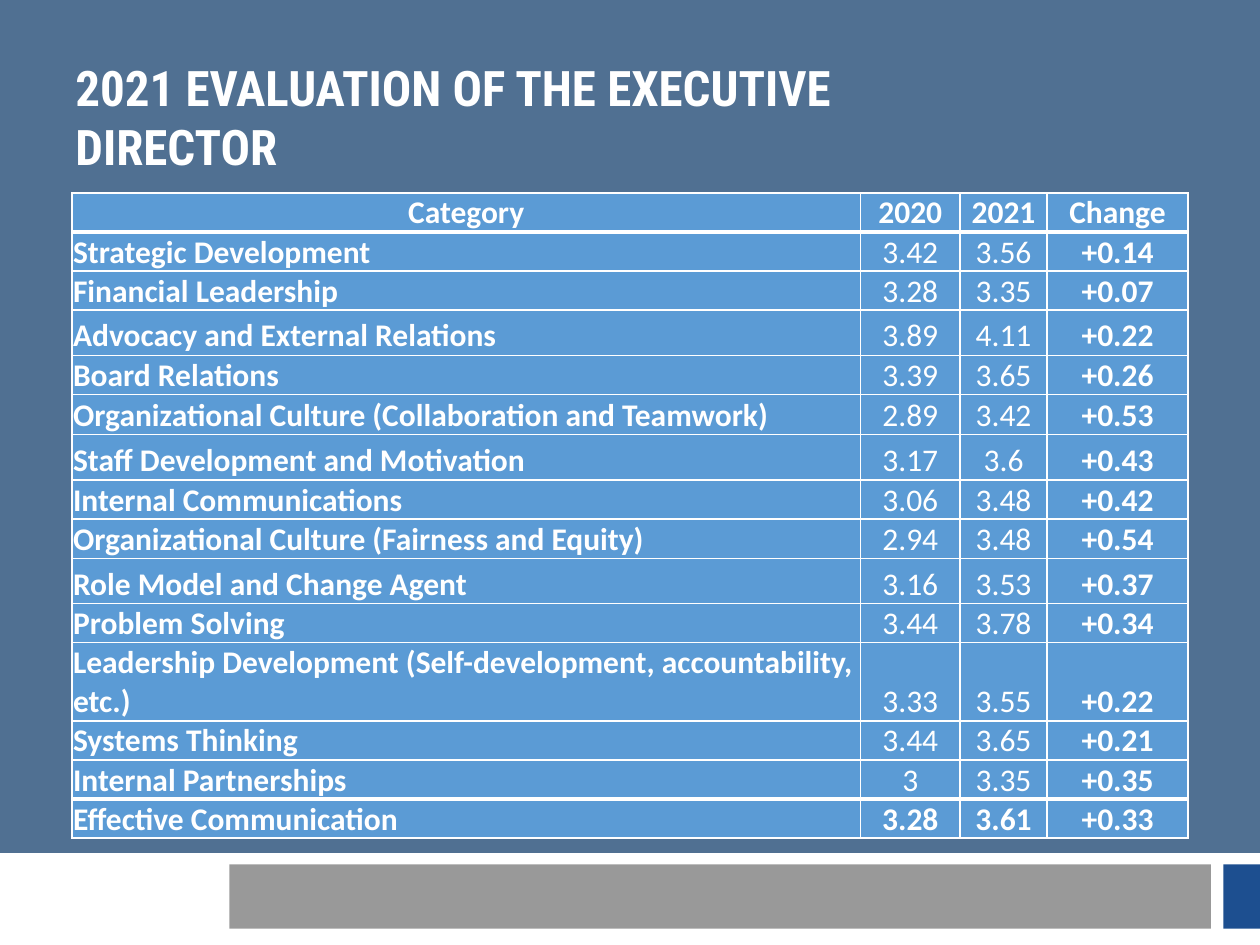
from typing import NamedTuple

from lxml.etree import SubElement
from pptx import Presentation
from pptx.dml.color import RGBColor
from pptx.enum.shapes import MSO_SHAPE
from pptx.enum.text import MSO_ANCHOR, PP_ALIGN
from pptx.oxml.ns import qn
from pptx.util import Inches, Pt

WHITE = RGBColor(0xFF, 0xFF, 0xFF)
BLACK = RGBColor(0x00, 0x00, 0x00)
SLATE = RGBColor(0x50, 0x70, 0x92)
NAVY = RGBColor(0x1D, 0x4F, 0x90)
CELL_BLUE = RGBColor(0x5B, 0x9B, 0xD5)

TITLE = "2021 EVALUATION OF THE EXECUTIVE DIRECTOR"
TITLE_FONT = {"name": "Roboto Condensed", "size": Pt(28), "bold": True}
TABLE_FONT = {"name": "Calibri", "size": Pt(18)}
CELL_FORMAT = {
    "margin_left": Inches(0.01),
    "margin_right": Inches(0.01),
    "margin_top": Inches(0.01),
    "margin_bottom": 0,
    "vertical_anchor": MSO_ANCHOR.BOTTOM,
}
COLUMN_WIDTHS = (6.26, 0.79, 0.69, 1.12)
NORMAL, MEDIUM, TALL, DOUBLE = 0.31, 0.32, 0.36, 0.62
THIN, THICK = Pt(1), Pt(3)


class Panel(NamedTuple):
    left: float
    top: float
    width: float
    height: float
    color: RGBColor
    opacity: int = 100


class Rating(NamedTuple):
    category: str
    before: str
    after: str
    change: str
    height: float = NORMAL


PANELS = (
    Panel(0, 0, 10, 6.77, SLATE),
    Panel(9.71, 6.86, 0.29, 0.51, NAVY),
    Panel(1.82, 6.86, 7.79, 0.51, BLACK, opacity=40),
)
RATINGS = (
    Rating("Category", "2020", "2021", "Change"),
    Rating("Strategic Development", "3.42", "3.56", "+0.14"),
    Rating("Financial Leadership", "3.28", "3.35", "+0.07"),
    Rating("Advocacy and External Relations", "3.89", "4.11", "+0.22", TALL),
    Rating("Board Relations", "3.39", "3.65", "+0.26"),
    Rating("Organizational Culture (Collaboration and Teamwork)",
           "2.89", "3.42", "+0.53", MEDIUM),
    Rating("Staff Development and Motivation", "3.17", "3.6", "+0.43", TALL),
    Rating("Internal Communications", "3.06", "3.48", "+0.42"),
    Rating("Organizational Culture (Fairness and Equity)", "2.94", "3.48", "+0.54"),
    Rating("Role Model and Change Agent", "3.16", "3.53", "+0.37", TALL),
    Rating("Problem Solving", "3.44", "3.78", "+0.34"),
    Rating("Leadership Development (Self-development, accountability, etc.)",
           "3.33", "3.55", "+0.22", DOUBLE),
    Rating("Systems Thinking", "3.44", "3.65", "+0.21"),
    Rating("Internal Partnerships", "3", "3.35", "+0.35"),
    Rating("Effective Communication", "3.28", "3.61", "+0.33"),
)


def apply_format(target, values: dict) -> None:
    for name, value in values.items():
        setattr(target, name, value)


def add_panel(slide, panel: Panel) -> None:
    shape = slide.shapes.add_shape(
        MSO_SHAPE.RECTANGLE, *(Inches(length) for length in panel[:4]))
    shape.shadow.inherit = False
    shape.line.fill.background()
    shape.fill.solid()
    shape.fill.fore_color.rgb = panel.color
    if panel.opacity < 100:
        color = shape.fill._xPr.find(f".//{qn('a:srgbClr')}")
        SubElement(color, qn("a:alpha"), val=str(panel.opacity * 1000))


def add_title(slide) -> None:
    box = slide.shapes.add_textbox(
        Inches(0.5), Inches(0.3), Inches(7.79), Inches(1.25))
    frame = box.text_frame
    apply_format(frame, {"word_wrap": True, "vertical_anchor": MSO_ANCHOR.MIDDLE})
    frame.text = TITLE
    font = frame.paragraphs[0].font
    apply_format(font, TITLE_FONT)
    font.color.rgb = WHITE


def set_borders(cell, top: int, bottom: int) -> None:
    """Draw white cell borders; must run before the cell is filled."""
    properties = cell._tc.get_or_add_tcPr()
    for side, width in zip("LRTB", (THIN, THIN, top, bottom)):
        line = SubElement(properties, qn(f"a:ln{side}"), w=str(int(width)))
        fill = SubElement(line, qn("a:solidFill"))
        SubElement(fill, qn("a:srgbClr"), val=str(WHITE))


def add_ratings_table(slide) -> None:
    height = sum(rating.height for rating in RATINGS)
    table = slide.shapes.add_table(
        len(RATINGS), len(COLUMN_WIDTHS), Inches(0.57), Inches(1.53),
        Inches(sum(COLUMN_WIDTHS)), Inches(height)).table
    for column, width in zip(table.columns, COLUMN_WIDTHS):
        column.width = Inches(width)

    last = len(RATINGS) - 1
    for row, rating in enumerate(RATINGS):
        table.rows[row].height = Inches(rating.height)
        for column, text in enumerate(rating[:4]):
            cell = table.cell(row, column)
            apply_format(cell, CELL_FORMAT)
            set_borders(cell, top=THICK if row in (1, last) else THIN,
                        bottom=THICK if row in (0, last - 1) else THIN)
            cell.fill.solid()
            cell.fill.fore_color.rgb = CELL_BLUE
            cell.text = text
            paragraph = cell.text_frame.paragraphs[0]
            is_label = column == 0 and row > 0
            paragraph.alignment = PP_ALIGN.LEFT if is_label else PP_ALIGN.CENTER
            font = paragraph.runs[0].font
            apply_format(font, TABLE_FONT)
            font.bold = row in (0, last) or column in (0, 3)
            font.color.rgb = WHITE


def main() -> None:
    presentation = Presentation()
    presentation.slide_width = Inches(10)
    presentation.slide_height = Inches(7.5)
    slide = presentation.slides.add_slide(presentation.slide_layouts[6])
    for panel in PANELS:
        add_panel(slide, panel)
    add_title(slide)
    add_ratings_table(slide)
    presentation.save("out.pptx")


if __name__ == "__main__":
    main()
